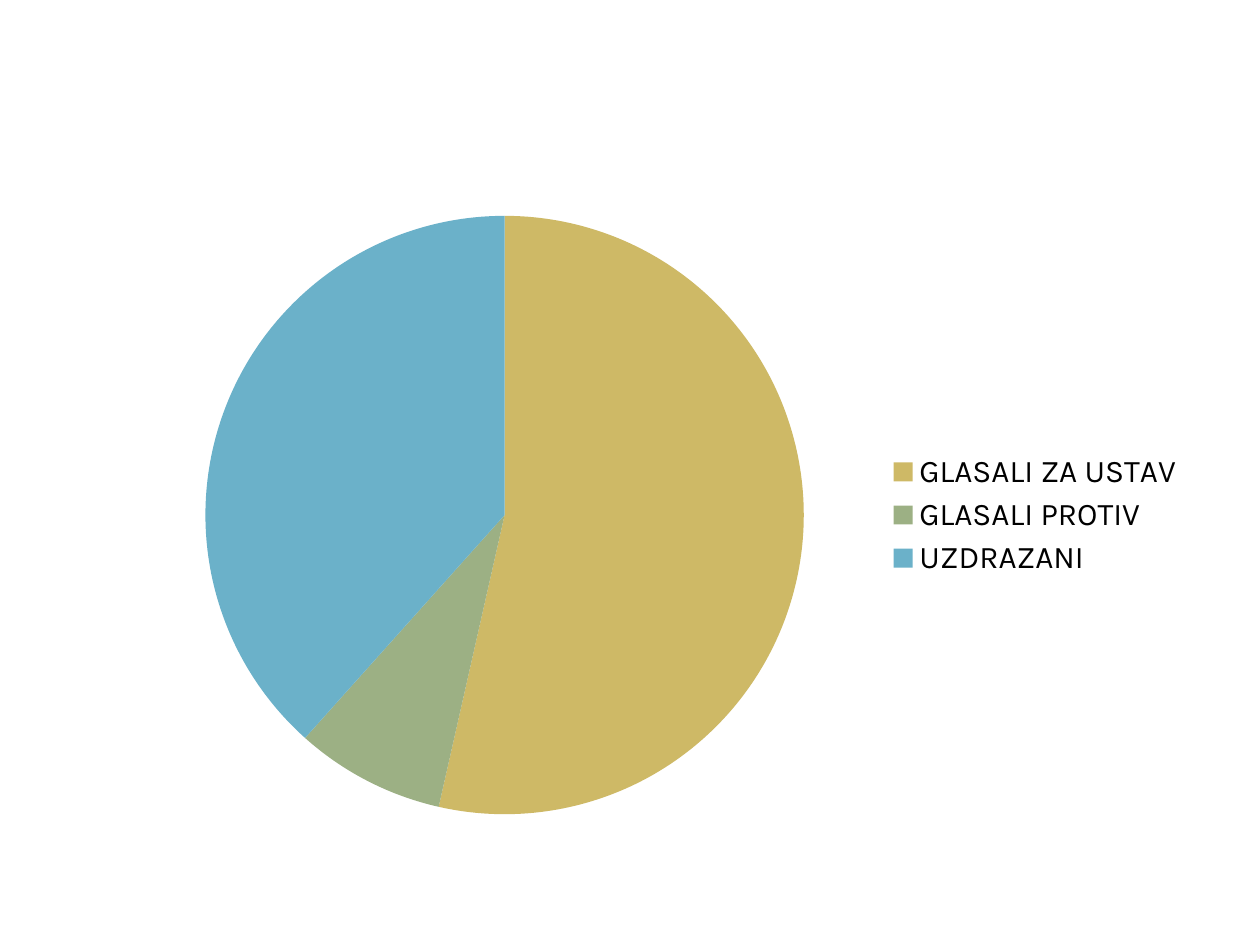
import pptx
import pptx.util
import pptx.chart.data
import pptx.dml.color
import pptx.enum.chart

VOTES = [
    ("GLASALI ZA USTAV", 53, "CEB966"),
    ("GLASALI PROTIV", 8, "9CB084"),
    ("UZDRAZANI", 38, "6BB1C9"),
]
THEME = {"font": "Karla", "size": 18, "text": "000000"}
SIZE = (10, 7.5)
AREA = (0.1, 0.21, 0.85, 0.67)


def color(code):
    return pptx.dml.color.RGBColor.from_string(code)


def add_pie(slide):
    data = pptx.chart.data.CategoryChartData()
    data.categories = [name for name, _, _ in VOTES]
    data.add_series("Series 1", [count for _, count, _ in VOTES])
    box = [pptx.util.Inches(share * SIZE[i % 2]) for i, share in enumerate(AREA)]
    kind = pptx.enum.chart.XL_CHART_TYPE.PIE
    chart = slide.shapes.add_chart(kind, *box, data).chart

    for key, value in {"has_title": False, "has_legend": True}.items():
        setattr(chart, key, value)
    side = pptx.enum.chart.XL_LEGEND_POSITION.RIGHT
    for key, value in {"position": side, "include_in_layout": False}.items():
        setattr(chart.legend, key, value)
    style = {"name": THEME["font"], "size": pptx.util.Pt(THEME["size"])}
    for key, value in style.items():
        setattr(chart.font, key, value)
    chart.font.color.rgb = color(THEME["text"])

    plot = chart.plots[0]
    plot.vary_by_categories = True
    for i, (_, _, code) in enumerate(VOTES):
        look = plot.series[0].points[i].format
        look.fill.solid()
        look.fill.fore_color.rgb = color(code)
        look.line.fill.background()


def main():
    deck = pptx.Presentation()
    deck.slide_width, deck.slide_height = map(pptx.util.Inches, SIZE)
    add_pie(deck.slides.add_slide(deck.slide_layouts[6]))
    deck.save("out.pptx")


if __name__ == "__main__":
    main()
